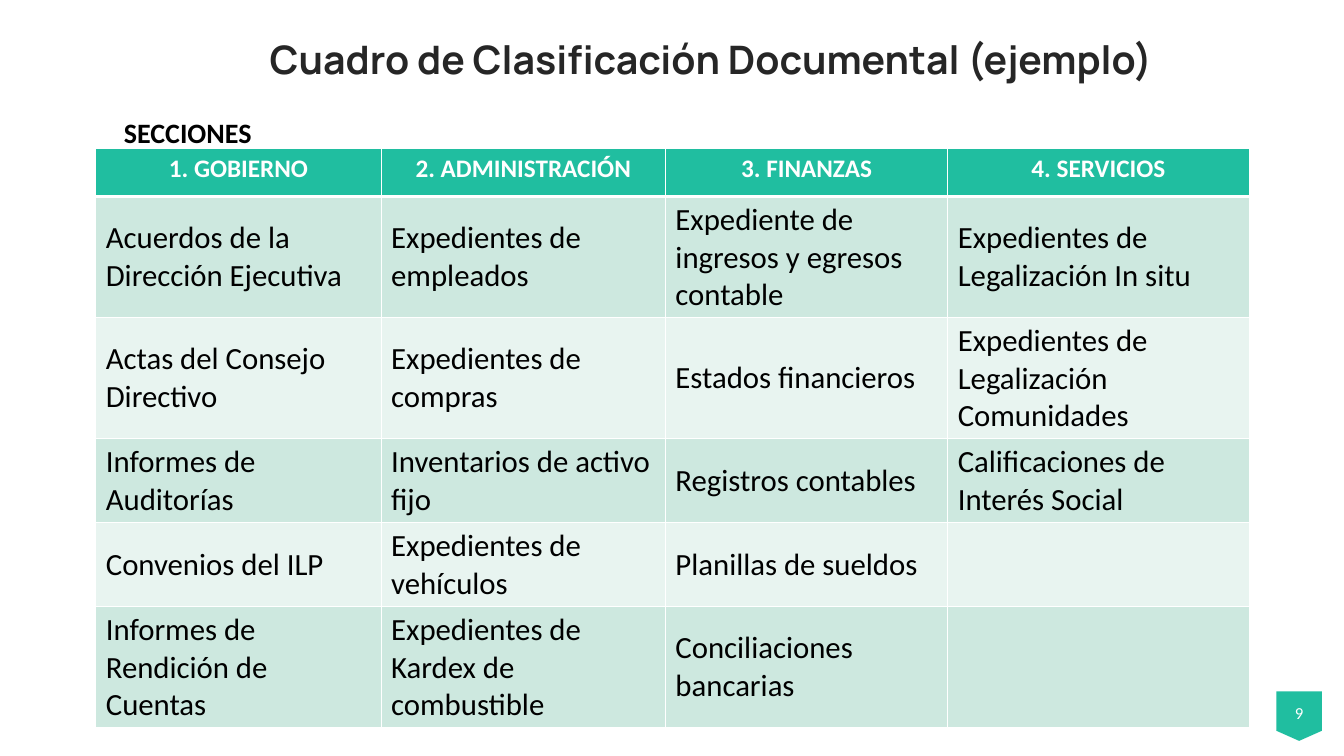
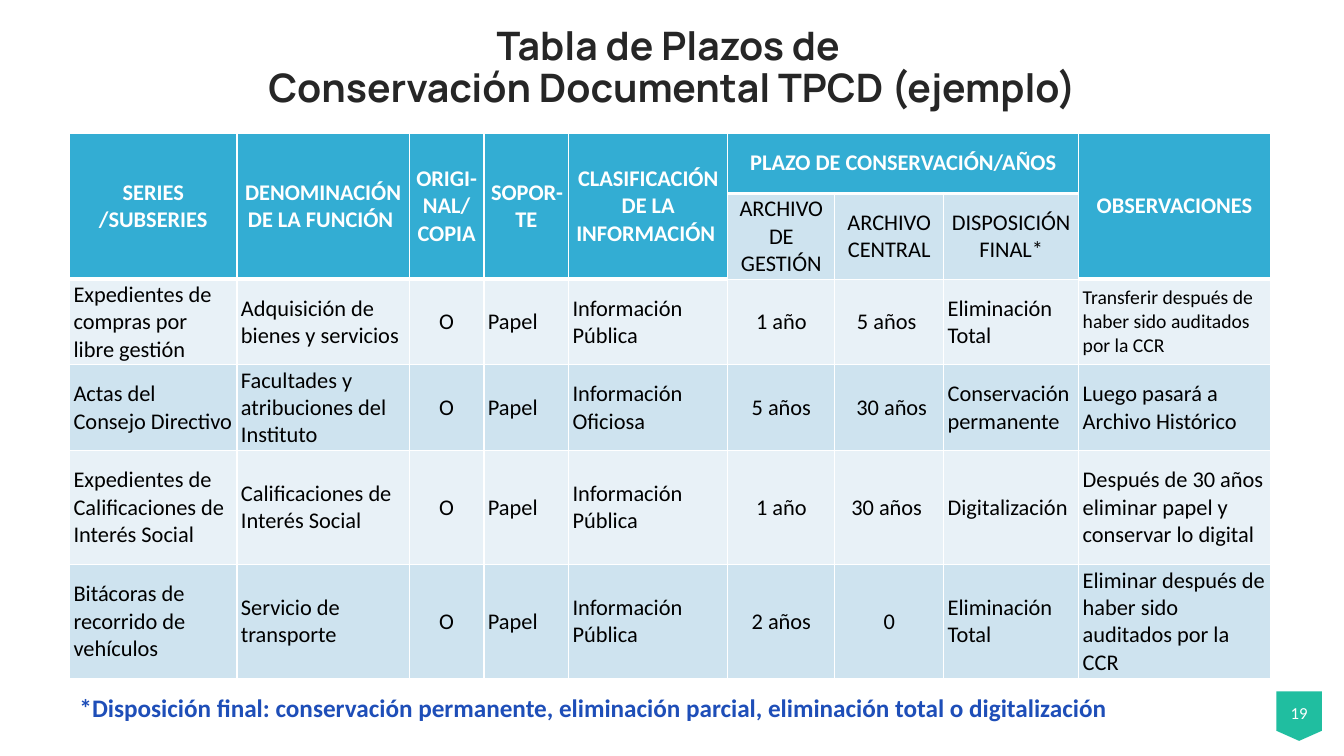
from dataclasses import dataclass
from typing import Callable

from lxml import etree
from pptx import Presentation
from pptx import util as u
from pptx.dml.color import RGBColor
from pptx.enum import shapes, text
from pptx.oxml import ns

EMU_PER_PX = 9144  # 100 px to the inch
COLORS = {
    "teal": "20BEA0", "teal_band": "CDE8DF", "teal_pale": "E8F4F0",
    "blue": "33ADD3", "blue_band": "CEE3EF", "blue_pale": "E8F1F7",
    "title": "262626", "note": "1E4EB8", "black": "000000", "white": "FFFFFF",
}
BODY_FONT, TITLE_FONT = "Calibri", "Manrope"
CENTER = text.PP_ALIGN.CENTER
TOP, MIDDLE = text.MSO_ANCHOR.TOP, text.MSO_ANCHOR.MIDDLE


@dataclass(frozen=True)
class Box:
    left: int
    top: int
    width: int
    height: int

    def emu(self) -> list[u.Emu]:
        return [px(side) for side in (self.left, self.top, self.width, self.height)]


@dataclass(frozen=True)
class Style:
    size: int
    color: str
    bold: bool = False
    font: str = BODY_FONT


@dataclass(frozen=True)
class Grid:
    """A banded table; None in rows is a cell covered by a merge."""
    left: int
    top: int
    columns: list[int]
    heights: list[int]
    rows: list[list[str | None]]
    palette: str
    head: Style
    body: Style
    is_head: Callable[[int, int], bool]
    is_centered: Callable[[int, int], bool]
    head_anchor: text.MSO_ANCHOR = MIDDLE
    insets: tuple[int, int] = (10, 5)
    merges: tuple[tuple[int, int, int, int], ...] = ()
    special: tuple[tuple[int, int, Style], ...] = ()


TITLE = Style(28, "title", True, TITLE_FONT)
PAGE_NUMBER = Style(12, "white")

SECTIONS = Grid(
    left=95, top=147, columns=[283, 282, 280, 299], heights=[48, 120, 120, 83, 83, 120],
    rows=[
        ["1. GOBIERNO", "2. ADMINISTRACIÓN", "3. FINANZAS", "4. SERVICIOS"],
        ["Acuerdos de la Dirección Ejecutiva", "Expedientes de empleados",
         "Expediente de ingresos y egresos contable", "Expedientes de Legalización In situ"],
        ["Actas del Consejo Directivo", "Expedientes de compras",
         "Estados financieros", "Expedientes de Legalización Comunidades"],
        ["Informes de Auditorías", "Inventarios de activo fijo",
         "Registros contables", "Calificaciones de Interés Social"],
        ["Convenios del ILP", "Expedientes de vehículos", "Planillas de sueldos", None],
        ["Informes de Rendición de Cuentas", "Expedientes de Kardex de combustible",
         "Conciliaciones bancarias", None],
    ],
    palette="teal", head=Style(18, "white", True), body=Style(22, "black"),
    is_head=lambda row, column: row == 0,
    is_centered=lambda row, column: row == 0,
    head_anchor=TOP,
)

TERM_COLUMNS = range(5, 8)
SPANNING_COLUMNS = (0, 1, 2, 3, 4, 8)
RETENTION = Grid(
    left=69, top=132, columns=[166, 171, 74, 84, 158, 106, 108, 134, 190],
    heights=[60, 85, 85, 85, 113, 113],
    rows=[
        ["SERIES /SUBSERIES", "DENOMINACIÓN DE LA FUNCIÓN ", "ORIGI-NAL/ COPIA", "SOPOR-TE",
         "CLASIFICACIÓN DE LA INFORMACIÓN ", "PLAZO DE CONSERVACIÓN/AÑOS", None, None,
         "OBSERVACIONES"],
        [None, None, None, None, None,
         "ARCHIVO DE GESTIÓN", "ARCHIVO CENTRAL", "DISPOSICIÓN FINAL*", None],
        ["Expedientes de compras por libre gestión", "Adquisición de bienes y servicios",
         "O", "Papel", "Información Pública", "1 año", "5 años ", "Eliminación Total",
         "Transferir después de haber sido auditados por la CCR"],
        ["Actas del Consejo Directivo", "Facultades y atribuciones del Instituto",
         "O", "Papel", "Información Oficiosa", "5 años", " 30 años", "Conservación permanente",
         "Luego pasará a Archivo Histórico"],
        ["Expedientes de Calificaciones de Interés Social", "Calificaciones de Interés Social",
         "O", "Papel", "Información Pública", "1 año", "30 años ", "Digitalización",
         "Después de 30 años eliminar papel y conservar lo digital"],
        ["Bitácoras de recorrido de vehículos", "Servicio de transporte",
         "O", "Papel", "Información Pública", "2 años", "0", "Eliminación Total",
         "Eliminar después de haber sido auditados por la CCR"],
    ],
    palette="blue", head=Style(16, "white", True), body=Style(16, "black"),
    is_head=lambda row, column: row == 0 or (row == 1 and column not in TERM_COLUMNS),
    is_centered=lambda row, column: row < 2 or column in (2, 5, 6),
    insets=(4, 0),
    merges=((0, 5, 0, 7), *((0, column, 1, column) for column in SPANNING_COLUMNS)),
    special=((2, 8, Style(14, "black")),),
)


def px(length: int) -> u.Emu:
    return u.Emu(length * EMU_PER_PX)


def rgb(name: str) -> RGBColor:
    return RGBColor.from_string(COLORS[name])


def add_span(para, words: str, style: Style) -> None:
    span = para.add_run()
    span.text = words
    span.font.name = style.font
    span.font.size = u.Pt(style.size)
    span.font.bold = style.bold
    span.font.color.rgb = rgb(style.color)


def add_text(page, box: Box, lines: list[str], style: Style, *, centered: bool = False,
             wrap: bool = True, inset: bool = True, spacing: float = 1.0) -> None:
    """Place one paragraph whose lines are parted by line breaks."""
    frame = page.shapes.add_textbox(*box.emu()).text_frame
    frame.word_wrap = wrap
    if not inset:
        frame.margin_left = frame.margin_right = frame.margin_top = frame.margin_bottom = 0
    para = frame.paragraphs[0]
    para.line_spacing = spacing
    if centered:
        para.alignment = CENTER
    for index, line in enumerate(lines):
        if index:
            para.add_line_break()
        add_span(para, line, style)


def add_badge_part(page, kind: shapes.MSO_SHAPE, box: Box, rotation: int) -> None:
    part = page.shapes.add_shape(kind, *box.emu())
    part.rotation = rotation
    part.shadow.inherit = False
    part.fill.solid()
    part.fill.fore_color.rgb = rgb("teal")
    part.line.fill.background()


def add_page(deck, title_box: Box, title: list[str], number: int):
    """Add a slide with the shared title style and page-number badge."""
    page = deck.slides.add_slide(deck.slide_layouts[6])
    add_badge_part(page, shapes.MSO_SHAPE.RECTANGLE, Box(1266, 686, 45, 39), 0)
    add_badge_part(page, shapes.MSO_SHAPE.ISOSCELES_TRIANGLE, Box(1266, 725, 45, 10), 180)
    add_text(page, Box(1253, 692, 71, 30), [str(number)], PAGE_NUMBER, centered=True)
    add_text(page, title_box, title, TITLE, centered=True, inset=False, spacing=0.9)
    return page


def set_borders(cell, top: int, bottom: int) -> None:
    """Draw white borders; top and bottom are widths in points, the sides 1 point."""
    properties = cell._tc.get_or_add_tcPr()
    widths = {"lnL": 1, "lnR": 1, "lnT": top, "lnB": bottom}
    for index, (tag, width) in enumerate(widths.items()):
        line = etree.Element(ns.qn(f"a:{tag}"), w=str(u.Pt(width)))
        fill = etree.SubElement(line, ns.qn("a:solidFill"))
        etree.SubElement(fill, ns.qn("a:srgbClr"), val=COLORS["white"])
        properties.insert(index, line)


def add_grid(page, grid: Grid) -> None:
    box = Box(grid.left, grid.top, sum(grid.columns), sum(grid.heights))
    table = page.shapes.add_table(len(grid.heights), len(grid.columns), *box.emu()).table
    table.horz_banding = False
    for column, width in zip(table.columns, grid.columns):
        column.width = px(width)
    for row, height in zip(table.rows, grid.heights):
        row.height = px(height)
    for top, left, bottom, right in grid.merges:
        table.cell(top, left).merge(table.cell(bottom, right))
    special = {(row, column): style for row, column, style in grid.special}

    for row, words_in_row in enumerate(grid.rows):
        for column, words in enumerate(words_in_row):
            cell = table.cell(row, column)
            head = grid.is_head(row, column)
            under_head = row > 0 and grid.is_head(row - 1, column)
            band = "band" if row % 2 else "pale"
            cell.fill.solid()
            cell.fill.fore_color.rgb = rgb(grid.palette if head else f"{grid.palette}_{band}")
            set_borders(cell, 3 if under_head else 1, 3 if head else 1)
            cell.vertical_anchor = grid.head_anchor if head else MIDDLE
            cell.margin_left = cell.margin_right = px(grid.insets[0])
            cell.margin_top = cell.margin_bottom = px(grid.insets[1])
            if words is None:
                continue
            para = cell.text_frame.paragraphs[0]
            if grid.is_centered(row, column):
                para.alignment = CENTER
            add_span(para, words, special.get((row, column), grid.head if head else grid.body))


def main() -> None:
    deck = Presentation()
    deck.slide_width, deck.slide_height = px(1333), px(750)

    page = add_page(deck, Box(231, 40, 948, 42),
                    ["Cuadro de Clasificación Documental (ejemplo)"], 9)
    add_text(page, Box(113, 110, 381, 44), ["SECCIONES"], Style(20, "black", True))
    add_grid(page, SECTIONS)

    page = add_page(deck, Box(87, 26, 1159, 85),
                    ["Tabla de Plazos de ", "Conservación Documental TPCD (ejemplo)"], 19)
    add_grid(page, RETENTION)
    add_text(page, Box(69, 682, 1047, 40),
             ["*Disposición final: conservación permanente, eliminación parcial, "
              "eliminación total o digitalización"],
             Style(18, "note", True), wrap=False)

    deck.save("out.pptx")


if __name__ == "__main__":
    main()
